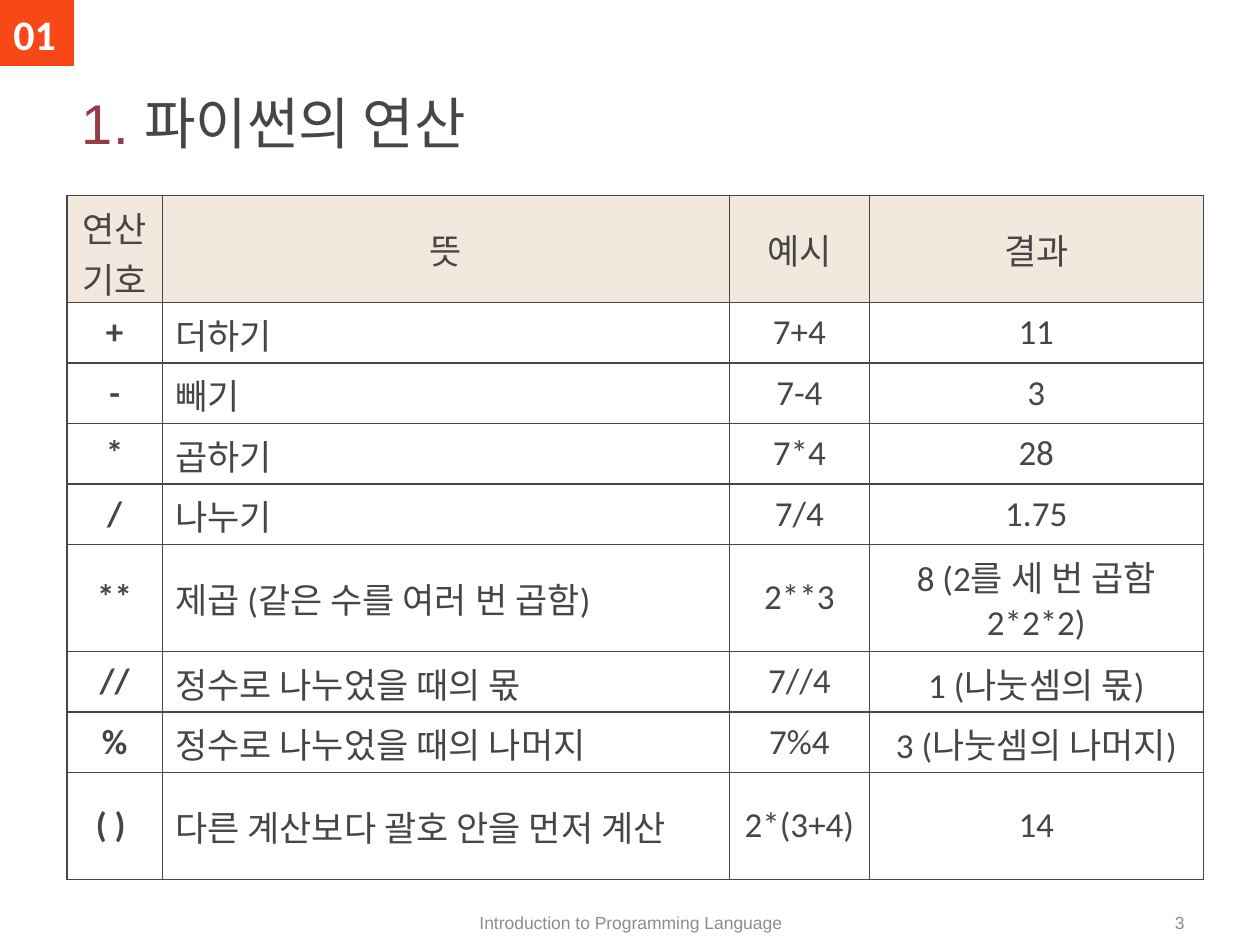
from lxml import etree
from pptx import Presentation
from pptx.dml.color import RGBColor
from pptx.enum.shapes import MSO_SHAPE
from pptx.enum.text import MSO_ANCHOR, PP_ALIGN
from pptx.oxml.ns import qn
from pptx.util import Inches, Pt

COLORS = {name: RGBColor.from_string(value) for name, value in {
    "text": "464646", "number": "953D46", "badge": "F84818",
    "header": "F2E8DE", "footer": "8D8D8D", "white": "FFFFFF"}.items()}
COLUMN_WIDTHS = [0.76, 4.5, 1.11, 2.65]
SINGLE_ROW, DOUBLE_ROW = 0.48, 0.85
DOUBLE_ROWS = {0, 5, 8}
ROWS = [
    ("연산 기호", "뜻", "예시", "결과"),
    ("+", "더하기", "7+4", "11"),
    ("-", "빼기", "7-4", "3"),
    ("*", "곱하기", "7*4", "28"),
    ("/", "나누기", "7/4", "1.75"),
    ("**", "제곱 (같은 수를 여러 번 곱함)", "2**3", "8 (2를 세 번 곱함 2*2*2)"),
    ("//", "정수로 나누었을 때의 몫", "7//4", "1 (나눗셈의 몫)"),
    ("%", "정수로 나누었을 때의 나머지", "7%4", "3 (나눗셈의 나머지)"),
    ("( ) ", "다른 계산보다 괄호 안을 먼저 계산", "2*(3+4)", "14"),
]


def write(holder, text, size, font_name, color, alignment, bold=False):
    """Put one formatted paragraph into a text frame."""
    paragraph = holder.paragraphs[0]
    paragraph.text = text
    paragraph.alignment = alignment
    font = paragraph.font
    font.size, font.name, font.bold = Pt(size), font_name, bold
    font.color.rgb = COLORS[color]


def add_borders(cell):
    properties = cell._tc.get_or_add_tcPr()
    for position, side in enumerate(("a:lnL", "a:lnR", "a:lnT", "a:lnB")):
        line = etree.Element(qn(side), w=str(Pt(1)))
        fill = etree.SubElement(line, qn("a:solidFill"))
        etree.SubElement(fill, qn("a:srgbClr"), val=str(COLORS["text"]))
        properties.insert(position, line)


presentation = Presentation()
presentation.slide_width, presentation.slide_height = Inches(10), Inches(7.5)
slide = presentation.slides.add_slide(presentation.slide_layouts[5])

# Title with a coloured number
title = slide.shapes.title
title.left, title.top = Inches(0.55), Inches(0.41)
title.width, title.height = Inches(8.87), Inches(0.88)
title.text_frame.vertical_anchor = MSO_ANCHOR.BOTTOM
paragraph = title.text_frame.paragraphs[0]
paragraph.alignment = PP_ALIGN.LEFT
paragraph.font.size, paragraph.font.name = Pt(32), "Arial"
for text, color in (("1. ", "number"), ("파이썬의 연산", "text")):
    run = paragraph.add_run()
    run.text = text
    run.font.color.rgb = COLORS[color]

# Chapter badge
badge = slide.shapes.add_shape(MSO_SHAPE.FLOWCHART_PROCESS, 0, 0, Inches(0.59), Inches(0.52))
badge.shadow.inherit = False
badge.fill.solid()
badge.fill.fore_color.rgb = COLORS["badge"]
badge.line.fill.background()

# Chapter number and footer
for text, left, top, width, height, size, font_name, color, alignment, anchor in (
    ("01", -0.12, 0.02, 0.79, 0.5, 24, "Calibri", "white", PP_ALIGN.CENTER, MSO_ANCHOR.TOP),
    ("Introduction to Programming Language", 3.42, 7.16, 3.17, 0.32,
     10, "Arial", "footer", PP_ALIGN.CENTER, MSO_ANCHOR.MIDDLE),
    ("3", 7.17, 7.16, 2.33, 0.32, 10, "Arial", "footer", PP_ALIGN.RIGHT, MSO_ANCHOR.MIDDLE),
):
    box = slide.shapes.add_textbox(Inches(left), Inches(top), Inches(width), Inches(height))
    box.text_frame.word_wrap = True
    box.text_frame.vertical_anchor = anchor
    write(box.text_frame, text, size, font_name, color, alignment, bold=color == "white")

# Operator table
row_heights = [DOUBLE_ROW if row in DOUBLE_ROWS else SINGLE_ROW for row in range(len(ROWS))]
table = slide.shapes.add_table(
    len(ROWS), len(COLUMN_WIDTHS), Inches(0.53), Inches(1.55),
    Inches(sum(COLUMN_WIDTHS)), Inches(sum(row_heights))).table
table.horz_banding = False
for column, width in zip(table.columns, COLUMN_WIDTHS):
    column.width = Inches(width)
for row_index, texts in enumerate(ROWS):
    table.rows[row_index].height = Inches(row_heights[row_index])
    is_header = row_index == 0
    for column_index, text in enumerate(texts):
        cell = table.cell(row_index, column_index)
        cell.vertical_anchor = MSO_ANCHOR.MIDDLE
        cell.fill.solid()
        cell.fill.fore_color.rgb = COLORS["header" if is_header else "white"]
        is_meaning = column_index == 1 and not is_header
        write(cell.text_frame, text, 20, "Calibri", "text",
              PP_ALIGN.LEFT if is_meaning else PP_ALIGN.CENTER,
              bold=column_index == 0 and not is_header)
        add_borders(cell)

presentation.save("out.pptx")
